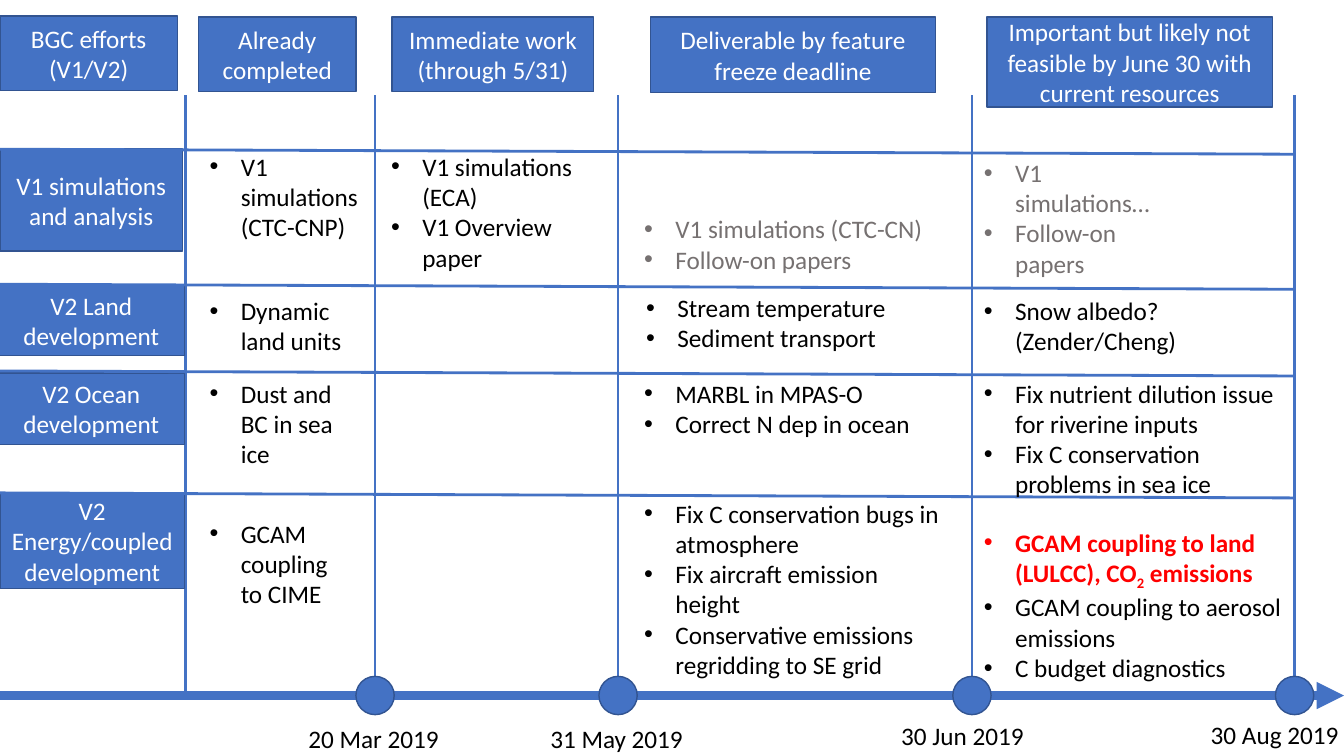
from dataclasses import dataclass

from lxml import etree
from pptx import Presentation
from pptx.dml.color import RGBColor
from pptx.enum.shapes import MSO_CONNECTOR, MSO_SHAPE
from pptx.enum.text import MSO_ANCHOR, MSO_AUTO_SIZE, PP_ALIGN
from pptx.oxml.ns import qn
from pptx.util import Inches, Pt


@dataclass(frozen=True)
class Theme:
    font: str = "Calibri"
    size: int = 18
    blue: str = "4472C4"
    outline: str = "325491"
    black: str = "000000"
    gray: str = "767171"
    red: str = "FF0000"
    white: str = "FFFFFF"
    outline_width: float = 1
    grid_width: float = 2
    timeline_width: float = 6.5
    bullet_indent: float = 0.31


class RoadmapSlide:
    def __init__(self, slide, theme):
        self.slide = slide
        self.theme = theme

    def style(self, paragraph, color, bold=False):
        font = paragraph.font
        font.name = self.theme.font
        font.size = Pt(self.theme.size)
        font.bold = bold
        font.color.rgb = RGBColor.from_string(color)

    def line(self, x1, y1, x2, y2, width, arrow=False):
        connector = self.slide.shapes.add_connector(
            MSO_CONNECTOR.STRAIGHT, Inches(x1), Inches(y1), Inches(x2), Inches(y2))
        connector.line.color.rgb = RGBColor.from_string(self.theme.blue)
        connector.line.width = Pt(width)
        if arrow:
            etree.SubElement(connector.line._get_or_add_ln(), qn("a:tailEnd"), type="triangle")
        etree.SubElement(connector._element.spPr, qn("a:effectLst"))

    def filled_shape(self, kind, left, top, width, height):
        shape = self.slide.shapes.add_shape(
            kind, Inches(left), Inches(top), Inches(width), Inches(height))
        shape.shadow.inherit = False
        shape.fill.solid()
        shape.fill.fore_color.rgb = RGBColor.from_string(self.theme.blue)
        shape.line.color.rgb = RGBColor.from_string(self.theme.outline)
        shape.line.width = Pt(self.theme.outline_width)
        return shape

    def milestone(self, x, y, diameter=0.38):
        self.filled_shape(MSO_SHAPE.OVAL, x - diameter / 2, y - diameter / 2, diameter, diameter)

    def heading(self, text, left, top, width, height):
        frame = self.filled_shape(MSO_SHAPE.RECTANGLE, left, top, width, height).text_frame
        frame.word_wrap = True
        frame.vertical_anchor = MSO_ANCHOR.MIDDLE
        paragraph = frame.paragraphs[0]
        paragraph.text = text
        paragraph.alignment = PP_ALIGN.CENTER
        self.style(paragraph, self.theme.white)

    def text_frame(self, left, top, width, height, wrap):
        frame = self.slide.shapes.add_textbox(
            Inches(left), Inches(top), Inches(width), Inches(height)).text_frame
        frame.word_wrap = wrap
        frame.auto_size = MSO_AUTO_SIZE.SHAPE_TO_FIT_TEXT
        return frame

    def date(self, text, left, top, width):
        paragraph = self.text_frame(left, top, width, 0.4, False).paragraphs[0]
        paragraph.text = text
        self.style(paragraph, self.theme.black)

    def bullets(self, items, left, top, width, height, color=None, urgent=()):
        """Add a bulleted list; items in urgent are bold red, and "_" lowers the next character."""
        frame = self.text_frame(left, top, width, height, True)
        for index, item in enumerate(items):
            paragraph = frame.add_paragraph() if index else frame.paragraphs[0]
            properties = paragraph._p.get_or_add_pPr()
            indent = Inches(self.theme.bullet_indent)
            properties.set("marL", str(indent))
            properties.set("indent", str(-indent))
            etree.SubElement(properties, qn("a:buFont"), typeface="Arial")
            etree.SubElement(properties, qn("a:buChar"), char="•")
            is_urgent = item in urgent
            self.style(paragraph, self.theme.red if is_urgent else color or self.theme.black, is_urgent)
            normal, _, lowered = item.partition("_")
            paragraph.add_run().text = normal
            if lowered:
                subscript = paragraph.add_run()
                subscript.text = lowered[0]
                subscript._r.get_or_add_rPr().set("baseline", "-25000")
                paragraph.add_run().text = lowered[1:]


THEME = Theme()
TIMELINE_Y = 6.9
GRID_TOP = 0.94
GRID_RIGHT = 12.84
ROW_SLOPE = 0.05
FIRST_DIVIDER = 1.84
DONE, NOW, FREEZE, LATER = 1.98, 3.78, 6.29, 9.66

# x of the milestone, then label, left, top and width of its date
MILESTONES = [
    (3.72, "20 Mar 2019", 2.96, 7.13, 1.51),
    (6.13, "31 May 2019", 5.36, 7.13, 1.53),
    (9.64, "30 Jun 2019", 8.84, 7.1, 1.43),
    (GRID_RIGHT, "30 Aug 2019", 11.91, 7.09, 1.48),
]
ROW_LINES = [1.48, 2.82, 3.68, 4.89]
HEADINGS = [
    ("BGC efforts (V1/V2)", 0, 0.16, 1.76, 0.74),
    ("Already completed", 1.97, 0.17, 1.56, 0.74),
    ("Immediate work (through 5/31)", 3.89, 0.17, 2, 0.74),
    ("Deliverable by feature freeze deadline", 6.45, 0.17, 2.83, 0.75),
    ("Important but likely not feasible by June 30 with current resources",
     9.79, 0.17, 2.83, 0.89),
    ("V1 simulations and analysis", 0, 1.48, 1.81, 1.01),
    ("V2 Land development", -0.02, 2.82, 1.85, 0.71),
    ("V2 Ocean development", -0.02, 3.7, 1.85, 0.71),
    ("V2 Energy/coupled development", 0, 4.89, 1.83, 0.95),
]
URGENT = "GCAM coupling to land (LULCC), CO_2 emissions"
TASKS = [
    (["V1 simulations (CTC-CNP)"], DONE, 1.45, 1.77, 1.01),
    (["V1 simulations (ECA)", "V1 Overview paper"], NOW, 1.45, 2.09, 1.31),
    (["V1 simulations (CTC-CN)", "Follow-on papers"], FREEZE, 2.07, 3.23, 0.71, THEME.gray),
    (["V1 simulations…", "Follow-on papers"], LATER, 1.51, 1.85, 1.31, THEME.gray),
    (["Dynamic land units"], DONE, 2.88, 1.56, 0.71),
    (["Stream temperature", "Sediment transport"], FREEZE + 0.02, 2.85, 2.96, 0.71),
    (["Snow albedo? (Zender/Cheng)"], LATER, 2.88, 2.96, 0.71),
    (["Dust and BC in sea ice"], DONE, 3.7, 1.49, 1.01),
    (["MARBL in MPAS-O", "Correct N dep in ocean"], FREEZE, 3.7, 3.15, 0.71),
    (["Fix nutrient dilution issue for riverine inputs",
      "Fix C conservation problems in sea ice"], LATER, 3.7, 3.15, 1.31),
    (["GCAM coupling to CIME"], DONE, 5.09, 1.49, 1.01),
    (["Fix C conservation bugs in atmosphere", "Fix aircraft emission height",
      "Conservative emissions regridding to SE grid"], FREEZE, 4.89, 3.15, 1.92),
    ([URGENT, "GCAM coupling to aerosol emissions", "C budget diagnostics"],
     LATER, 5.18, 3.15, 1.62),
]


def main():
    presentation = Presentation()
    presentation.slide_width = Inches(13.33)
    presentation.slide_height = Inches(7.5)
    slide = presentation.slides.add_slide(presentation.slide_layouts[6])
    roadmap = RoadmapSlide(slide, THEME)

    roadmap.line(0, TIMELINE_Y, 13.33, TIMELINE_Y, THEME.timeline_width, arrow=True)
    for x in [FIRST_DIVIDER] + [milestone[0] for milestone in MILESTONES]:
        roadmap.line(x, TIMELINE_Y, x, GRID_TOP, THEME.grid_width)
    for x, *date in MILESTONES:
        roadmap.milestone(x, TIMELINE_Y)
        roadmap.date(*date)
    for heading in HEADINGS:
        roadmap.heading(*heading)
    for y in ROW_LINES:
        roadmap.line(GRID_RIGHT, y + ROW_SLOPE, 0, y, THEME.grid_width)
    for task in TASKS:
        roadmap.bullets(*task, urgent=[URGENT])

    presentation.save("out.pptx")


if __name__ == "__main__":
    main()
